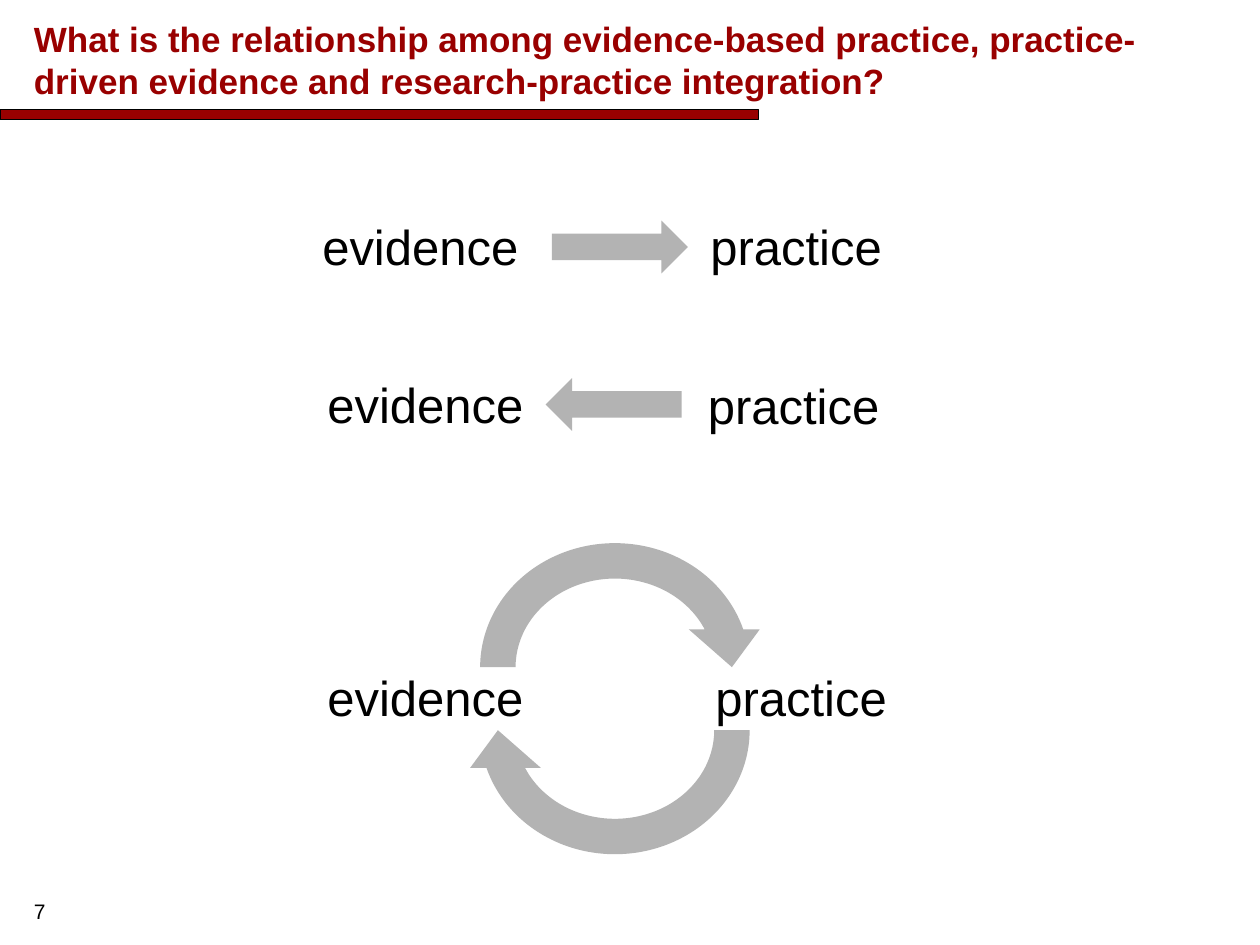
"""Build a slide on how evidence and practice relate to each other."""
from pptx import Presentation
from pptx.dml.color import RGBColor
from pptx.enum.shapes import MSO_SHAPE
from pptx.enum.text import MSO_ANCHOR, MSO_AUTO_SIZE
from pptx.util import Inches, Pt

RECT = MSO_SHAPE.RECTANGLE
ARROW = MSO_SHAPE.RIGHT_ARROW
CIRCULAR = MSO_SHAPE.CIRCULAR_ARROW
MIDDLE, TOP = MSO_ANCHOR.MIDDLE, MSO_ANCHOR.TOP
FIT = MSO_AUTO_SIZE.SHAPE_TO_FIT_TEXT

FONT = "Arial"
COLORS = {"red": "990000", "black": "000000", "gray": "B3B3B3"}

TITLE = ("What is the relationship among evidence-based practice, "
         "practice-driven evidence and research-practice integration?")
PAGE_NUMBER = "7"
WORDS = [
    ("evidence", 2.46, 1.67), ("practice", 5.54, 1.67),
    ("evidence", 2.5, 2.92), ("practice", 5.52, 2.93),
    ("evidence", 2.5, 5.25), ("practice", 5.58, 5.25),
]
WORD_WIDTHS = {"evidence": 1.78, "practice": 1.62}
WORD_HEIGHT = 0.57
ARROWS = [
    (ARROW, 4.38, 1.75, 0), (ARROW, 4.33, 3, 180),
    (CIRCULAR, 3.67, 4.17, 0), (CIRCULAR, 3.67, 4.67, 180),
]
ARROW_SIZES = {ARROW: (1.08, 0.42), CIRCULAR: (2.42, 2.25)}


def rgb(name):
    return RGBColor.from_string(COLORS[name])


def add_text(s, text, box, size, color="black", bold=False, anchor=TOP, wrap=True):
    sp = s.shapes.add_textbox(*map(Inches, box))
    tf = sp.text_frame
    tf.word_wrap = wrap
    tf.vertical_anchor = anchor
    if not wrap:
        tf.auto_size = FIT
    r = tf.paragraphs[0].add_run()
    r.text = text
    r.font.name = FONT
    r.font.size = Pt(size)
    r.font.bold = bold
    r.font.color.rgb = rgb(color)


def add_shape(s, kind, box, fill, line=None):
    sp = s.shapes.add_shape(kind, *map(Inches, box))
    sp.shadow.inherit = False
    sp.fill.solid()
    sp.fill.fore_color.rgb = rgb(fill)
    if line:
        sp.line.color.rgb = rgb(line)
        sp.line.width = Pt(0.75)
    else:
        sp.line.fill.background()
    return sp


def main():
    prs = Presentation()
    prs.slide_width, prs.slide_height = Inches(10), Inches(7.5)
    s = prs.slides.add_slide(prs.slide_layouts[6])

    add_shape(s, RECT, (0, 0.87, 6.02, 0.08), "red", "black")
    add_text(s, TITLE, (0.17, 0.09, 9.68, 0.77), 20, "red", bold=True, anchor=MIDDLE)
    add_text(s, PAGE_NUMBER, (0.17, 7.08, 2.08, 0.27), 12)

    for word, x, y in WORDS:
        add_text(s, word, (x, y, WORD_WIDTHS[word], WORD_HEIGHT), 28, wrap=False)
    for kind, x, y, angle in ARROWS:
        sp = add_shape(s, kind, (x, y, *ARROW_SIZES[kind]), "gray")
        sp.rotation = angle

    prs.save("out.pptx")


if __name__ == "__main__":
    main()
